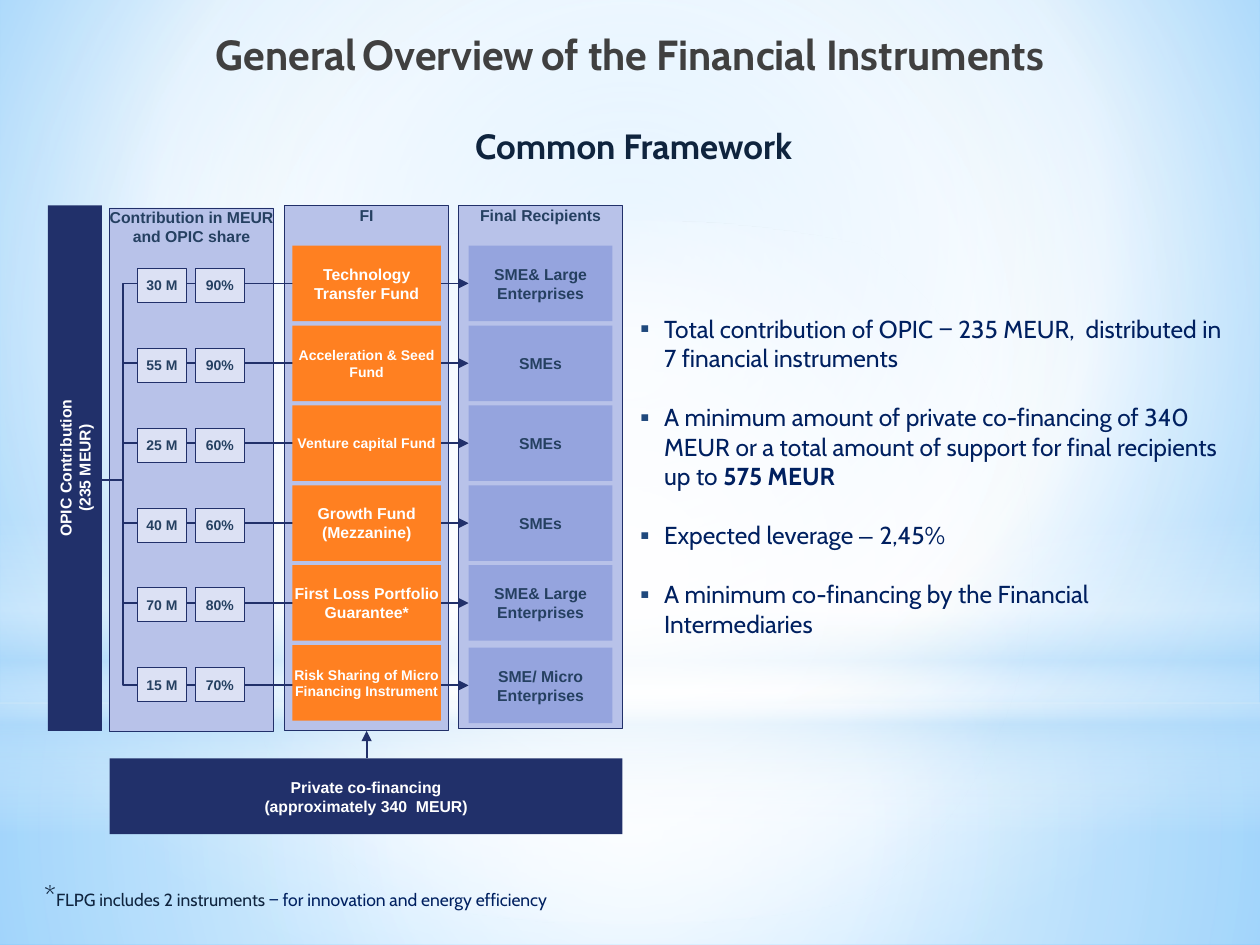
import pptx
import pptx.util
import pptx.dml.color
import pptx.enum.shapes
import pptx.enum.text
import pptx.oxml
import pptx.oxml.ns
from dataclasses import dataclass

Inches, Pt = pptx.util.Inches, pptx.util.Pt
SHAPE = pptx.enum.shapes.MSO_SHAPE
CONNECTOR = pptx.enum.shapes.MSO_CONNECTOR
ALIGN = pptx.enum.text.PP_ALIGN
ANCHOR = pptx.enum.text.MSO_ANCHOR
qn = pptx.oxml.ns.qn
NS = pptx.oxml.ns.nsdecls("a")


@dataclass(frozen=True)
class Theme:
    heading: str = "Cabin"
    label: str = "Arial"
    title: str = "404040"
    dark: str = "0F243E"
    body: str = "002060"
    navy: str = "21306A"
    ink: str = "254061"
    white: str = "FFFFFF"
    sky: str = "B4DCFA"
    panel: str = "B8C2E9"
    instrument: str = "FF8021"
    recipient: str = "95A4DE"
    pill: str = "DCE1F4"
    bullet: str = "1F497D"
    title_pt: int = 24
    subtitle_pt: int = 20
    star_pt: int = 16
    body_pt: int = 14
    note_pt: int = 10
    label_pt: int = 9
    small_pt: int = 8


T = Theme()

# amount, share, instrument, instrument size, recipient, recipient drop
ROWS = [
    ("30 М", "90%", "Technology Transfer Fund", T.label_pt, "SME& Large Enterprises", 0),
    ("55 М", "90%", "Acceleration & Seed Fund", T.small_pt, "SMEs", 0),
    ("25 М", "60%", "Venture capital Fund", T.small_pt, "SMEs", 0),
    ("40 М", "60%", "Growth Fund\n(Mezzanine)", T.label_pt, "SMEs", 0),
    ("70 М", "80%", "First Loss Portfolio Guarantee*", T.label_pt, "SME& Large Enterprises", 0),
    ("15 М", "70%", "Risk Sharing of Micro Financing Instrument", T.small_pt,
     "SME/ Micro Enterprises", 0.02),
]

# text, font, bold for each run
BULLETS = [
    [("Total contribution of OPIC ‒ 235 MEUR,  distributed in 7 financial instruments", T.heading, False)],
    [("A minimum amount of private co-financing of 340 MEUR or a total amount of support "
      "for final recipients up to ", T.heading, False), ("575 MEUR", T.heading, True)],
    [("Expected leverage ", T.heading, False), ("‒ ", T.label, False), ("2,45%", T.heading, False)],
    [("A minimum co-financing by the Financial Intermediaries", T.heading, False)],
]


def rgb(color):
    return pptx.dml.color.RGBColor.from_string(color)


def gradient(stops, center=None):
    """Gradient of (position, colour, opacity): circular around center, else top down."""
    gs = "".join(f'<a:gs pos="{pos * 1000}"><a:srgbClr val="{color}">'
                 f'<a:alpha val="{alpha * 1000}"/></a:srgbClr></a:gs>'
                 for pos, color, alpha in stops)
    if center:
        sides = " ".join(f'{k}="{v * 1000}"' for k, v in zip("ltrb", center))
        shade = f'<a:path path="circle"><a:fillToRect {sides}/></a:path>'
    else:
        shade = '<a:lin ang="5400000" scaled="0"/>'
    return pptx.oxml.parse_xml(f'<a:gradFill {NS} rotWithShape="1"><a:gsLst>{gs}</a:gsLst>{shade}</a:gradFill>')


def swap_fill(parent, grad):
    parent.replace(parent.find(qn("a:solidFill")), grad)


def style(r, size, color, font=T.label, bold=True):
    r.font.size, r.font.name, r.font.bold = Pt(size), font, bold
    r.font.color.rgb = rgb(color)


def add_run(p, text, *look):
    r = p.add_run()
    r.text = text
    style(r, *look)


def zero_margins(tf):
    tf.margin_left = tf.margin_right = tf.margin_top = tf.margin_bottom = 0
    tf.word_wrap = True


def add_block(s, box, fill, text="", color=T.ink, size=T.label_pt, line=None,
              anchor=ANCHOR.MIDDLE, shape=SHAPE.RECTANGLE):
    sp = s.shapes.add_shape(shape, *map(Inches, box))
    sp.shadow.inherit = False
    sp.fill.solid()
    sp.fill.fore_color.rgb = rgb(fill)
    if line:
        sp.line.color.rgb = rgb(T.navy)
        sp.line.width = Pt(line)
    else:
        sp.line.fill.background()
    tf = sp.text_frame
    zero_margins(tf)
    tf.vertical_anchor = anchor
    tf.text = text
    for p in tf.paragraphs:
        p.alignment = ALIGN.CENTER
        for r in p.runs:
            style(r, size, color)
    return sp


def add_text(s, box):
    tf = s.shapes.add_textbox(*map(Inches, box)).text_frame
    zero_margins(tf)
    return tf


def add_arrow(s, kind, start, end, bend=None):
    cn = s.shapes.add_connector(kind, *map(Inches, start + end))
    cn.line.color.rgb = rgb(T.navy)
    cn.line.width = Pt(1)
    cn.line._get_or_add_ln().append(pptx.oxml.parse_xml(f'<a:tailEnd {NS} type="triangle"/>'))
    sp_pr = cn._element.spPr
    sp_pr.append(pptx.oxml.parse_xml(f"<a:effectLst {NS}/>"))
    if bend:
        sp_pr.find(qn("a:prstGeom")).get_or_add_avLst().append(pptx.oxml.parse_xml(
            f'<a:gd {NS} name="adj1" fmla="val {round(bend * 100000)}"/>'))


def add_backdrop(s, box):
    x, y, w, h = box
    s.background.fill.solid()
    swap_fill(s.element.find(".//" + qn("p:bgPr")), gradient(
        [(0, "9ED5FF", 100), (60, T.white, 100), (100, "5BB9FF", 100)], (20, 10, 20, 60)))
    mid = (50,) * 4
    layers = [
        (SHAPE.RECTANGLE, 5.58, h - 5.58, mid, [(0, T.white, 91), (37, T.white, 76), (100, T.sky, 79)]),
        (SHAPE.RECTANGLE, 0, 5.58, mid, [(0, T.white, 89), (48, T.white, 62), (100, T.sky, 79)]),
        (SHAPE.RECTANGLE, 4.12, 2.5, None, [(0, T.white, 0), (29, T.white, 30), (45, T.sky, 40),
                                            (55, T.white, 26), (65, T.sky, 60), (100, T.white, 0)]),
        (SHAPE.OVAL, 1.75, 5.58, mid, [(0, T.white, 100), (56, T.white, 0)]),
    ]
    for shape, top, height, center, stops in layers:
        sp = add_block(s, (x, y + top, w, height), T.white, shape=shape)
        swap_fill(sp._element.spPr, gradient(stops, center))


def add_headings(s, box):
    x, y, w, h = box
    p = add_text(s, (x, y, w, 0.4)).paragraphs[0]
    p.alignment = ALIGN.CENTER
    for i, part in enumerate(("General", "Overview", "of the Financial Instruments")):
        if i:
            add_run(p, " ", T.body_pt, T.title, T.label, False)
        add_run(p, part, T.title_pt, T.title, T.heading)
    p = add_text(s, (x + 0.38, y + 0.76, w - 0.7, 0.34)).paragraphs[0]
    p.alignment = ALIGN.CENTER
    add_run(p, "Common Framework", T.subtitle_pt, T.dark, T.heading)


def add_framework(s, box):
    x, y, w, h = box
    panel_w, panel_h, cell_h, bar_w = 1.3, 4.17, 0.6, 0.43
    pitch = 3.17 / (len(ROWS) - 1)
    tops = [y + 0.32 + i * pitch for i in range(len(ROWS))]
    money_x, fi_x, final_x = x + 0.49, x + 1.88, x + w - panel_w

    # Column panels
    for left, dy, height, head in ((final_x, 0, 4.15, "Final Recipients"),
                                   (money_x, 0.02, 4.15, "Contribution in MEUR and OPIC share"),
                                   (fi_x, 0, panel_h, "FI")):
        add_block(s, (left, y + dy, panel_w, height), T.panel, head, line=0.25, anchor=ANCHOR.TOP)

    # Arrows from the contribution bar to each recipient
    for top, row in zip(tops, ROWS):
        add_arrow(s, CONNECTOR.ELBOW, (x + bar_w, y + 2.18),
                  (final_x + 0.08, top + cell_h / 2 + row[-1]), bend=0.058)

    # Instrument rows
    for top, (amount, share, fund, size, recipient, drop) in zip(tops, ROWS):
        for left, text in ((money_x + 0.22, amount), (money_x + 0.68, share)):
            add_block(s, (left, top + 0.18, 0.39, 0.27), T.pill, text, size=T.small_pt, line=0.5)
        add_block(s, (fi_x + 0.06, top, 1.18, cell_h), T.instrument, fund, T.white, size)
        add_block(s, (final_x + 0.08, top + drop, 1.14, cell_h), T.recipient, recipient)

    # Funding sources
    add_block(s, (money_x, y + h - cell_h, x + w - money_x, cell_h), T.navy,
              "Private co-financing\v(approximately 340  MEUR)", T.white)
    mid = fi_x + panel_w / 2
    add_arrow(s, CONNECTOR.STRAIGHT, (mid, y + h - cell_h), (mid, y + panel_h))
    bar = add_block(s, (x + (bar_w - panel_h) / 2, y + (panel_h - bar_w) / 2, panel_h, bar_w),
                    T.navy, "OPIC Contribution\v(235 MEUR)", T.white)
    bar.rotation = 270


def add_bullets(s, box):
    tf = add_text(s, box)
    for i, runs in enumerate(BULLETS):
        p = tf.add_paragraph() if i else tf.paragraphs[0]
        p.space_before, p.space_after = Pt(5), Pt(12)
        for text, font, bold in runs:
            add_run(p, text, T.body_pt, T.body, font, bold)
        pPr = p._p.get_or_add_pPr()
        pPr.set("marL", str(Inches(0.19)))
        pPr.set("indent", str(-Inches(0.19)))
        for xml in (f'<a:buClr {NS}><a:srgbClr val="{T.bullet}"/></a:buClr>',
                    f'<a:buSzPct {NS} val="110000"/>',
                    f'<a:buFont {NS} typeface="{T.label}"/>',
                    f'<a:buChar {NS} char="▪"/>'):
            pPr.append(pptx.oxml.parse_xml(xml))


def add_footnote(s, box):
    p = add_text(s, box).paragraphs[0]
    add_run(p, "*", T.star_pt, T.dark, T.heading, False)
    add_run(p, "FLPG includes 2 instruments ", T.note_pt, T.dark, T.heading, False)
    add_run(p, "‒ for innovation and energy efficiency", T.note_pt, T.body, T.heading, False)


def main():
    prs = pptx.Presentation()
    prs.slide_width, prs.slide_height = Inches(10), Inches(7.5)
    s = prs.slides.add_slide(prs.slide_layouts[6])
    add_backdrop(s, (0, 0, 10, 7.5))
    add_headings(s, (0, 0.23, 10, 1.1))
    add_framework(s, (0.38, 1.63, 4.56, 4.99))
    add_bullets(s, (5.08, 2.49, 4.65, 2.64))
    add_footnote(s, (0.35, 6.97, 4.59, 0.27))
    prs.save("out.pptx")


if __name__ == "__main__":
    main()
